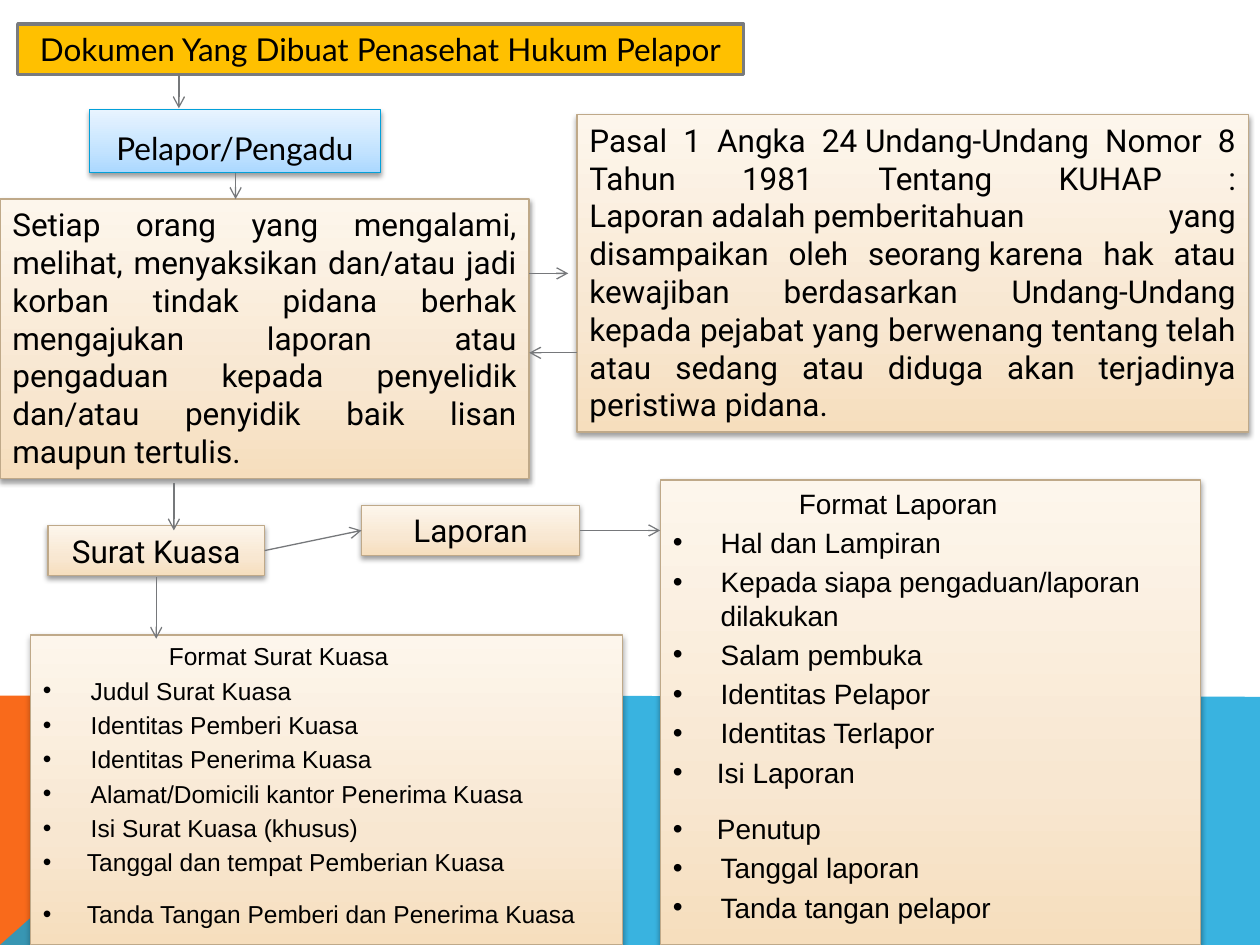
from copy import deepcopy

from lxml.etree import SubElement
from pptx import Presentation
from pptx.dml.color import RGBColor
from pptx.enum.shapes import MSO_CONNECTOR, MSO_SHAPE
from pptx.enum.text import MSO_ANCHOR, MSO_AUTO_SIZE, PP_ALIGN
from pptx.oxml.ns import qn
from pptx.util import Inches, Pt

CREAM = ("F6DEBD", "F8E7D1", "FDF6EC")
SKY = ("ABD8FF", "C3E3FF", "E8F4FF")
TAN = "BFA989"
HARD_SPACE = chr(160)  # keeps the words on either side on one line


def color(value):
    return RGBColor.from_string(value)


class SlideBuilder:
    """Holds the current slide and the shared style of its parts."""

    def __init__(self, page):
        self.page = page
        self.shapes = page.shapes

    def band(self, points, fill, alpha=None):
        corners = [(Inches(x), Inches(y)) for x, y in points]
        builder = self.shapes.build_freeform(*corners[0])
        builder.add_line_segments(corners[1:], close=True)
        shape = builder.convert_to_shape()
        self.solid(shape, fill)
        shape.line.fill.background()
        shape.shadow.inherit = False
        if alpha:
            srgb = shape._element.spPr.find(".//" + qn("a:srgbClr"))
            SubElement(srgb, qn("a:alpha"), val=str(alpha * 1000))

    def solid(self, shape, fill):
        shape.fill.solid()
        shape.fill.fore_color.rgb = color(fill)

    def gradient(self, shape, colors):
        shape.fill.gradient()
        shape.fill.gradient_angle = 90
        first = shape.fill.gradient_stops[0]._gs
        first.addnext(deepcopy(first))
        for stop, position, value in zip(shape.fill.gradient_stops, (0, 0.35, 1), colors):
            stop.position = position
            stop.color.rgb = color(value)

    def outline(self, shape, value, width):
        shape.line.color.rgb = color(value)
        shape.line.width = Pt(width)

    def drop_shadow(self, shape):
        effects = shape._element.spPr.find(qn("a:effectLst"))
        shadow = SubElement(effects, qn("a:outerShdw"), blurRad=str(Pt(3.1)), dist=str(Pt(1.6)),
                            dir="5400000", rotWithShape="0")
        black = SubElement(shadow, qn("a:srgbClr"), val="000000")
        SubElement(black, qn("a:alpha"), val="38000")

    def place(self, shape, at, anchor=MSO_ANCHOR.TOP):
        """Moves a shape to the front and prepares its text frame."""
        self.shapes._spTree.append(shape._element)
        shape.left, shape.top, shape.width, shape.height = map(Inches, at)
        shape.shadow.inherit = False
        frame = shape.text_frame
        frame.word_wrap = True
        frame.auto_size = MSO_AUTO_SIZE.NONE
        frame.vertical_anchor = anchor
        return frame

    def style(self, para, font, size):
        para.font.name = font
        para.font.size = Pt(size)
        para.font.color.rgb = color("000000")

    def title(self, text, at):
        shape = self.shapes.title
        para = self.place(shape, at).paragraphs[0]
        self.solid(shape, "FFC000")
        self.outline(shape, "797B7E", 2)
        para.text = text
        para.alignment = PP_ALIGN.CENTER
        self.style(para, "Lato", 18)

    def box(self, text, at, align=PP_ALIGN.CENTER, font="Roboto", fill=CREAM, line=TAN,
            anchor=MSO_ANCHOR.TOP):
        shape = self.shapes.add_shape(MSO_SHAPE.RECTANGLE, *map(Inches, at))
        para = self.place(shape, at, anchor).paragraphs[0]
        self.gradient(shape, fill)
        self.outline(shape, line, 0.75)
        self.drop_shadow(shape)
        para.text = text
        para.alignment = align
        self.style(para, font, 18)

    def checklist(self, index, heading, items, at, size, gap_after):
        """A heading and bullets; a wider gap follows the item gap_after."""
        shape = self.shapes.placeholders[index]
        frame = self.place(shape, at)
        self.gradient(shape, CREAM)
        self.outline(shape, TAN, 0.75)
        self.drop_shadow(shape)
        frame.text = "\n".join([heading, *items])
        for para in frame.paragraphs:
            props = para._p.get_or_add_pPr()
            if para.text == heading:
                props.set("marL", str(Inches(1)))
                props.set("indent", "0")
                SubElement(props, qn("a:buNone"))
            else:
                near_gap = para.text in items[gap_after:gap_after + 2]
                props.set("marL", str(Inches(0.35 if near_gap else 0.38)))
                props.set("indent", str(-Inches(0.38)))
                if para.text == items[gap_after]:
                    para.space_after = Pt(10)
                SubElement(props, qn("a:buFont"), typeface="Arial")
                SubElement(props, qn("a:buChar"), char="•")
            self.style(para, "Arial", size)

    def arrow(self, start, end):
        line = self.shapes.add_connector(MSO_CONNECTOR.STRAIGHT, *map(Inches, start + end))
        self.outline(line, "76787B", 0.75)
        SubElement(line.line._get_or_add_ln(), qn("a:tailEnd"), type="arrow")
        SubElement(line._element.spPr, qn("a:effectLst"))


def main():
    deck = Presentation()
    deck.slide_width, deck.slide_height = Inches(10), Inches(7.5)
    slide = SlideBuilder(deck.slides.add_slide(deck.slide_layouts[3]))

    # Bands at the foot of the slide
    slide.band([(0, 7.5), (0, 5.52), (2.23, 5.52), (3.91, 7.5)], "F96A1B")
    slide.band([(0, 7.5), (2.23, 5.52), (10, 5.53), (10, 7.5)], "08A1D9", alpha=80)

    # Reporter and legal basis
    slide.box("Pelapor/Pengadu", (0.71, 0.87, 2.31, 0.5), font="Lato", fill=SKY,
              line="03A0D9", anchor=MSO_ANCHOR.BOTTOM)
    legal_basis = ("Pasal 1 Angka 24_Undang-Undang Nomor 8 Tahun 1981 Tentang KUHAP : "
                   "Laporan_adalah_pemberitahuan yang disampaikan oleh seorang_karena hak "
                   "atau kewajiban berdasarkan Undang-Undang kepada pejabat yang berwenang "
                   "tentang_telah atau sedang atau diduga akan terjadinya peristiwa pidana.")
    slide.box(legal_basis.replace("_", HARD_SPACE), (4.58, 0.91, 5.33, 2.52),
              PP_ALIGN.JUSTIFY)
    slide.title("Dokumen Yang Dibuat Penasehat Hukum Pelapor", (0.14, 0.19, 5.76, 0.4))
    slide.box("Setiap orang yang mengalami, melihat, menyaksikan dan/atau jadi korban "
              "tindak pidana berhak mengajukan laporan atau pengaduan kepada penyelidik "
              "dan/atau penyidik baik lisan maupun tertulis.",
              (0, 1.58, 4.2, 2.22), PP_ALIGN.JUSTIFY)

    # Documents and their formats
    slide.box("Surat Kuasa", (0.38, 4.17, 1.72, 0.4))
    slide.checklist(1, "Format Laporan", [
        "Hal dan Lampiran", "Kepada siapa pengaduan/laporan dilakukan", "Salam pembuka",
        "Identitas Pelapor", "Identitas Terlapor", "Isi Laporan", "Penutup",
        "Tanggal laporan", "Tanda tangan pelapor",
    ], (5.24, 3.81, 4.29, 3.69), size=16, gap_after=5)
    slide.box("Laporan", (2.87, 4.01, 1.73, 0.4))
    slide.checklist(2, "Format Surat Kuasa", [
        "Judul Surat Kuasa", "Identitas Pemberi Kuasa", "Identitas Penerima Kuasa",
        "Alamat/Domicili kantor Penerima Kuasa", "Isi Surat Kuasa (khusus)",
        "Tanggal dan tempat Pemberian Kuasa", "Tanda Tangan Pemberi dan Penerima Kuasa",
    ], (0.24, 5.04, 4.7, 2.46), size=14, gap_after=5)

    # Flow arrows
    for start, end in [
        ((1.42, 0.59), (1.42, 0.86)),
        ((1.87, 1.37), (1.87, 1.58)),
        ((4.2, 2.17), (4.51, 2.17)),
        ((4.58, 2.8), (4.2, 2.8)),
        ((1.38, 3.83), (1.38, 4.21)),
        ((2.1, 4.37), (2.87, 4.21)),
        ((4.6, 4.21), (5.24, 4.21)),
        ((1.24, 4.58), (1.24, 5.07)),
    ]:
        slide.arrow(start, end)

    deck.save("out.pptx")


if __name__ == "__main__":
    main()
